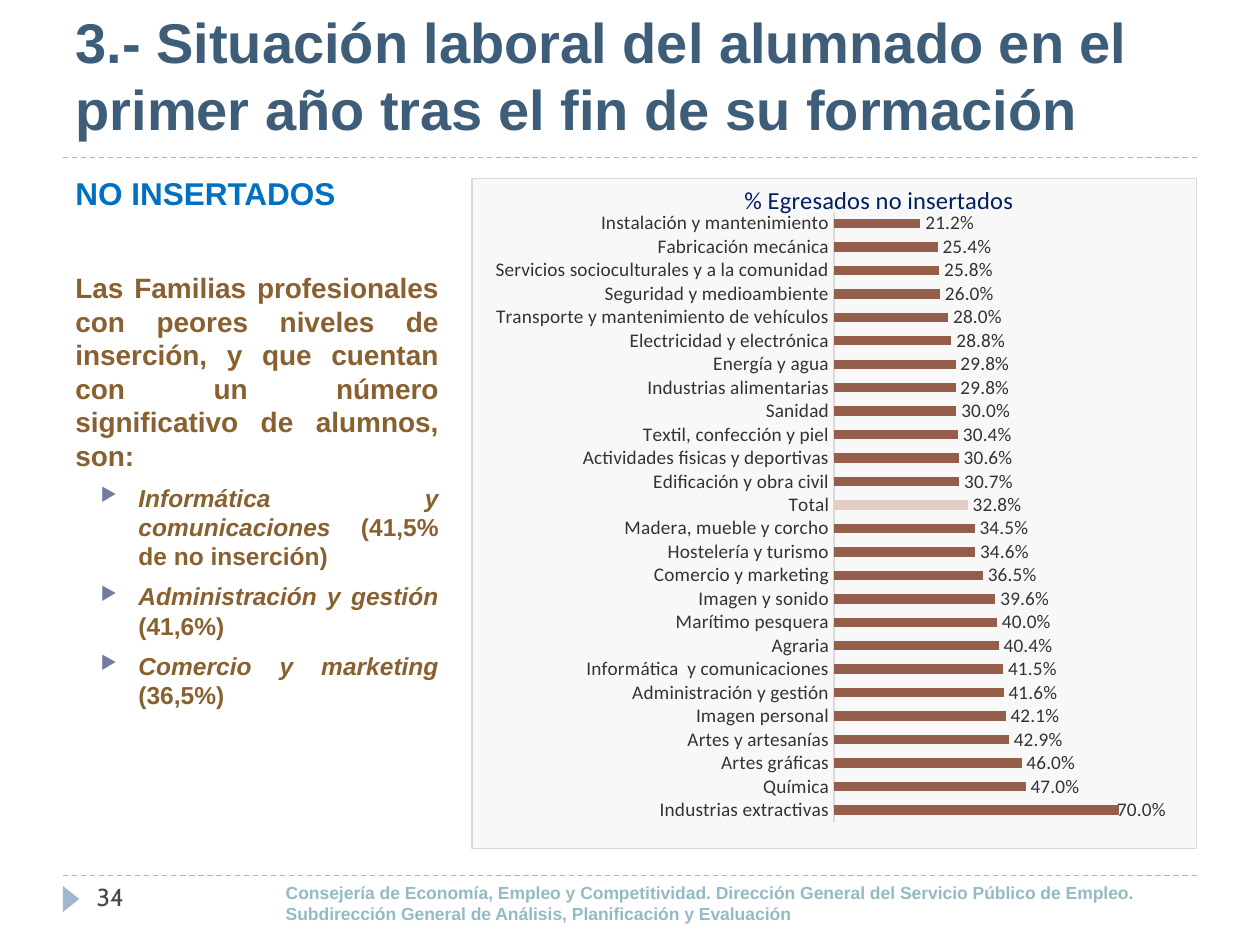
from copy import deepcopy

from lxml.etree import SubElement
from pptx import Presentation
from pptx.chart.data import CategoryChartData
from pptx.dml.color import RGBColor
from pptx.enum.chart import XL_CHART_TYPE as ChartType, XL_LABEL_POSITION as LabelPos
from pptx.enum.chart import XL_TICK_MARK as TickMark
from pptx.enum.dml import MSO_LINE_DASH_STYLE as Dash
from pptx.enum.shapes import MSO_CONNECTOR as Connector, MSO_SHAPE as Shape
from pptx.enum.text import MSO_ANCHOR as Anchor, MSO_AUTO_SIZE as AutoSize, PP_ALIGN as Align
from pptx.oxml import parse_xml
from pptx.oxml.ns import nsdecls, qn
from pptx.util import Pt

TITLE_BLUE = RGBColor(0x3E, 0x5D, 0x78)
HEADING_BLUE = RGBColor(0x00, 0x70, 0xC0)
BROWN = RGBColor(0x89, 0x60, 0x2F)
RULE_BLUE = RGBColor(0x9F, 0xB8, 0xCD)
FOOTER_TEAL = RGBColor(0x94, 0xBA, 0xC3)
NUMBER_GREY = RGBColor(0x46, 0x46, 0x53)
CHART_NAVY = RGBColor(0x00, 0x20, 0x60)
LABEL_GREY = RGBColor(0x33, 0x33, 0x33)
AXIS_GREY = RGBColor(0xD9, 0xD9, 0xD9)
BAR_BROWN = RGBColor(0x95, 0x5E, 0x4B)
TOTAL_PINK = RGBColor(0xE3, 0xCE, 0xC7)
BLACK = RGBColor(0, 0, 0)

FAMILIES = [
    ("Industrias extractivas", 0.7),
    ("Química", 0.47),
    ("Artes gráficas", 0.46),
    ("Artes y artesanías", 0.429),
    ("Imagen personal", 0.421),
    ("Administración y gestión", 0.416),
    ("Informática  y comunicaciones", 0.415),
    ("Agraria", 0.404),
    ("Marítimo pesquera", 0.4),
    ("Imagen y sonido", 0.396),
    ("Comercio y marketing", 0.365),
    ("Hostelería y turismo", 0.346),
    ("Madera, mueble y corcho", 0.345),
    ("Total", 0.328),
    ("Edificación y obra civil", 0.307),
    ("Actividades fisicas y deportivas", 0.306),
    ("Textil, confección y piel", 0.304),
    ("Sanidad", 0.3),
    ("Industrias alimentarias", 0.298),
    ("Energía y agua", 0.298),
    ("Electricidad y electrónica", 0.288),
    ("Transporte y mantenimiento de vehículos", 0.28),
    ("Seguridad y medioambiente", 0.26),
    ("Servicios socioculturales y a la comunidad", 0.258),
    ("Fabricación mecánica", 0.254),
    ("Instalación y mantenimiento", 0.212),
]
WORST_FAMILIES = [
    ("Informática y comunicaciones ", "(41,5% de no inserción)"),
    ("Administración y gestión ", "(41,6%)"),
    ("Comercio y marketing ", "(36,5%)"),
]


def style_font(font, size, color, name="Arial", bold=False, italic=False):
    """Set the typeface, size, colour and weight of a font."""
    font.name, font.size, font.bold, font.italic = name, Pt(size), bold, italic
    font.color.rgb = color


def write(paragraph, text, before=0, align=Align.LEFT, **font_format):
    """Add a formatted run to a paragraph."""
    paragraph.space_before, paragraph.alignment = Pt(before), align
    run = paragraph.add_run()
    run.text = text
    style_font(run.font, **font_format)


def add_text_frame(slide, box):
    """Return the wrapping frame of a new text box."""
    frame = slide.shapes.add_textbox(*map(Pt, box)).text_frame
    frame.word_wrap = True
    return frame


def add_bullet(paragraph):
    """Give a paragraph a hanging triangular bullet."""
    properties = paragraph._p.get_or_add_pPr()
    properties.set("marL", str(Pt(36)))
    properties.set("indent", str(Pt(-21.6)))
    color = SubElement(properties, qn("a:buClr"))
    SubElement(color, qn("a:srgbClr"), val="727CA3")
    SubElement(properties, qn("a:buSzPct"), val="76000")
    SubElement(properties, qn("a:buChar"), char="▶")


def add_rule(slide, left, top, width):
    """Draw a dashed horizontal rule."""
    rule = slide.shapes.add_connector(
        Connector.STRAIGHT, Pt(left), Pt(top), Pt(left + width), Pt(top))
    rule.line.color.rgb, rule.line.width = RULE_BLUE, Pt(0.75)
    rule.line.dash_style = Dash.DASH
    SubElement(rule._element.spPr, qn("a:effectLst"))


def add_title(slide, left, top, width, height):
    """Place the slide title with the rule below it."""
    title = slide.shapes.title
    title.left, title.top, title.width, title.height = map(Pt, (left, top, width, height))
    frame = title.text_frame
    frame.word_wrap, frame.auto_size = True, AutoSize.NONE
    frame.vertical_anchor = Anchor.MIDDLE
    write(frame.paragraphs[0], "3.- Situación laboral del alumnado en el primer año "
          "tras el fin de su formación", size=32, color=TITLE_BLUE, bold=True)
    add_rule(slide, left, top + height + 5, width)


def add_findings(slide, box):
    """Write the heading, the statement and the list of worst families."""
    frame = add_text_frame(slide, box)
    write(frame.paragraphs[0], "NO INSERTADOS", size=18, color=HEADING_BLUE, bold=True)
    write(frame.add_paragraph(), "Las Familias profesionales con peores niveles de inserción, "
          "y que cuentan con un número significativo de alumnos, son:",
          before=33.7, align=Align.JUSTIFY, size=16, color=BROWN, bold=True)
    for family, share in WORST_FAMILIES:
        item = frame.add_paragraph()
        add_bullet(item)
        for text, italic in ((family, True), (share, False)):
            write(item, text, before=6, align=Align.JUSTIFY,
                  size=14, color=BROWN, bold=True, italic=italic)


def set_layout(parent, **values):
    """Fix the place of a chart part in fractions of the chart."""
    layout = parent.find(qn("c:layout"))
    if layout is None:
        layout = parse_xml(f"<c:layout {nsdecls('c')}/>")
        parent.insert(0, layout)
    manual = SubElement(layout, qn("c:manualLayout"))
    for tag, value in values.items():
        SubElement(manual, qn(f"c:{tag}"), val=str(value))


def show_every_label(axis):
    """Keep all category labels of an axis, level and unskipped."""
    element = axis._element
    element.find(qn("c:txPr")).find(qn("a:bodyPr")).set("rot", "0")
    element.find(qn("c:noMultiLvlLbl")).addprevious(
        parse_xml(f'<c:tickLblSkip {nsdecls("c")} val="1"/>'))


def shift_first_label(labels, x, y):
    """Move the label of the first bar by fractions of the chart."""
    label = parse_xml(f'<c:dLbl {nsdecls("c")}><c:idx val="0"/><c:layout/></c:dLbl>')
    set_layout(label, x=x, y=y)
    for child in labels:
        if child.tag != qn("c:showLeaderLines"):
            label.append(deepcopy(child))
    labels.insert(0, label)


def add_chart(slide, box):
    """Draw the bar chart of graduates without a job by family."""
    data = CategoryChartData(number_format="0.0%")
    data.categories = [family for family, _ in FAMILIES]
    data.add_series("Series 1", [share for _, share in FAMILIES])
    chart = slide.shapes.add_chart(ChartType.BAR_CLUSTERED, *map(Pt, box), data).chart
    style_font(chart.font, 10, BLACK, "Calibri")
    chart.has_legend = False

    title = chart.chart_title
    write(title.text_frame.paragraphs[0], "% Egresados no insertados", align=Align.CENTER,
          size=14, color=CHART_NAVY, name="Calibri")
    title._element.find(qn("c:overlay")).set("val", "1")
    set_layout(title._element, xMode="edge", yMode="edge", x=0.37, y=0)

    families, shares = chart.category_axis, chart.value_axis
    families.major_tick_mark = families.minor_tick_mark = TickMark.NONE
    style_font(families.tick_labels.font, 11, LABEL_GREY, "Calibri")
    show_every_label(families)
    families.format.line.color.rgb, families.format.line.width = AXIS_GREY, Pt(0.75)
    shares.minimum_scale, shares.maximum_scale = 0, 0.8
    shares.has_major_gridlines = shares.visible = False

    plot = chart.plots[0]
    plot.gap_width, plot.vary_by_categories = 150, False
    bars = plot.series[0]
    bars.format.fill.solid()
    bars.format.fill.fore_color.rgb = BAR_BROWN
    total = bars.points[13].format.fill
    total.solid()
    total.fore_color.rgb = TOTAL_PINK
    labels = bars.data_labels
    labels.show_value, labels.position = True, LabelPos.OUTSIDE_END
    labels.number_format, labels.number_format_is_linked = "0.0%", False
    style_font(labels.font, 11, LABEL_GREY, "Calibri")
    shift_first_label(labels._element, -0.01, 0)

    chart_part = chart.element.find(qn("c:chart"))
    set_layout(chart_part.find(qn("c:plotArea")), layoutTarget="inner", xMode="edge",
               yMode="edge", x=0.5, y=0.05, w=0.45, h=0.91)
    chart_part.addnext(parse_xml(
        f'<c:spPr {nsdecls("c", "a")}><a:solidFill><a:srgbClr val="F2F2F2">'
        f'<a:alpha val="50000"/></a:srgbClr></a:solidFill><a:ln w="{Pt(0.75)}">'
        f'<a:solidFill><a:srgbClr val="{AXIS_GREY}"/></a:solidFill></a:ln></c:spPr>'))


def add_footer(slide, left, top, width):
    """Place the rule, marker, slide number and issuing body."""
    add_rule(slide, left, top, width)
    marker = slide.shapes.add_shape(
        Shape.ISOSCELES_TRIANGLE, Pt(left - 2.9), Pt(top + 8.6), Pt(15), Pt(9.4))
    marker.rotation, marker.shadow.inherit = 90, False
    marker.fill.solid()
    marker.fill.fore_color.rgb = RULE_BLUE
    marker.line.fill.background()
    number = add_text_frame(slide, (left + 12.2, top, 156, 28.8))
    write(number.paragraphs[0], "34", size=14, color=NUMBER_GREY, name="Cabin")
    issuer = add_text_frame(slide, (left + 120.2, top, 519, 31.7))
    lines = ("Consejería de Economía, Empleo y Competitividad. "
             "Dirección General del Servicio Público de Empleo.",
             "Subdirección General de Análisis, Planificación y Evaluación")
    for paragraph, line in zip((issuer.paragraphs[0], issuer.add_paragraph()), lines):
        write(paragraph, line, size=10, color=FOOTER_TEAL, bold=True)


def main():
    """Build the slide and save it."""
    deck = Presentation()
    deck.slide_width, deck.slide_height = Pt(720), Pt(540)
    slide = deck.slides.add_slide(deck.slide_layouts[5])
    add_title(slide, 36, 0, 648, 85)
    add_findings(slide, (36, 95.8, 221.8, 388.8))
    add_chart(slide, (269.3, 101.5, 414.7, 383.8))
    add_footer(slide, 36, 500.4, 648)
    deck.save("out.pptx")


if __name__ == "__main__":
    main()
